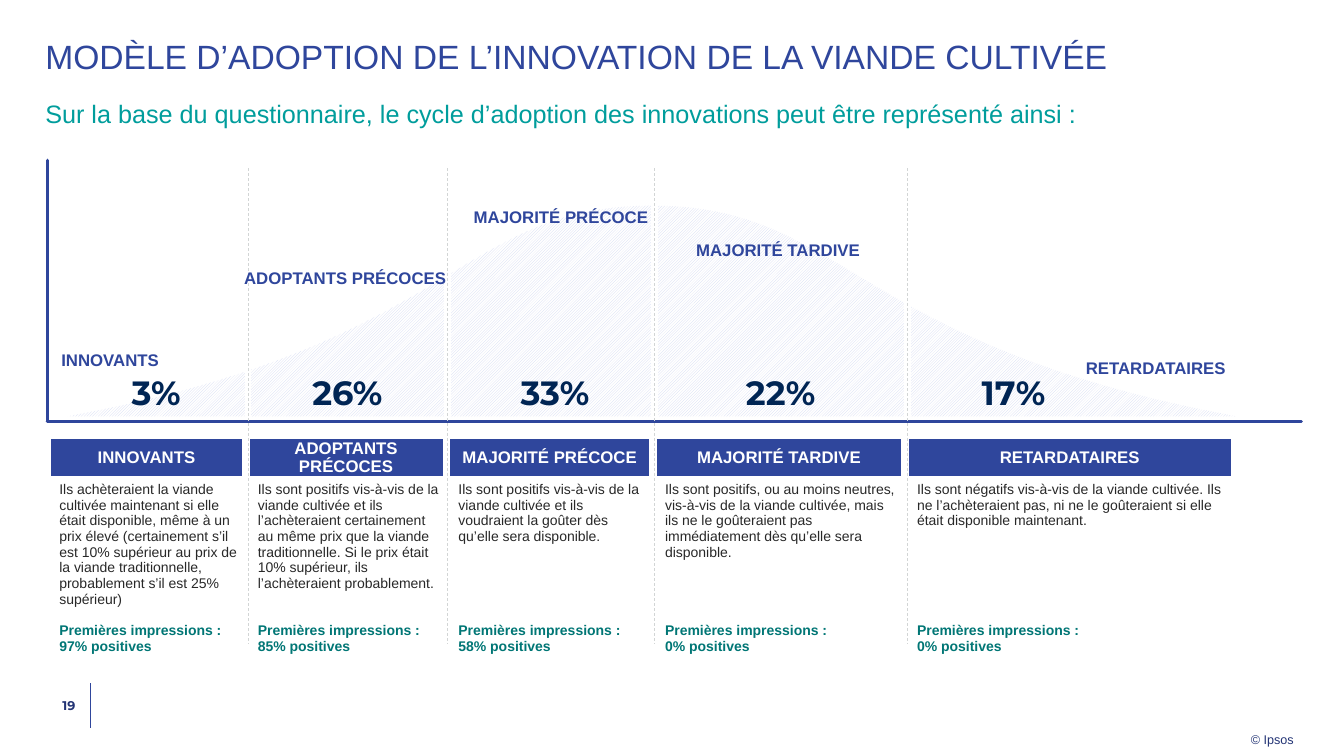
from pptx import Presentation
from pptx.dml.color import RGBColor
from pptx.enum.dml import MSO_LINE, MSO_PATTERN
from pptx.enum.shapes import MSO_CONNECTOR
from pptx.enum.text import MSO_ANCHOR as ANCHOR, PP_ALIGN as ALIGN
from pptx.oxml import parse_xml
from pptx.oxml.ns import nsdecls, qn
from pptx.util import Pt

BLUE, NAVY, TEAL, WHITE = "2F469C", "233475", "009D9C", "FFFFFF"

deck = Presentation()
deck.slide_width, deck.slide_height = Pt(960), Pt(540)
page = deck.slides.add_slide(deck.slide_layouts[6])


def write(frame, text, size=12, color=BLUE, font="Arial", bold=False, align=ALIGN.LEFT,
          anchor=ANCHOR.TOP, insets=(7.2, 3.6, 7.2, 3.6), wrap=True, spacing=None):
    """Fill a text frame with one formatted paragraph."""
    frame.margin_left, frame.margin_top, frame.margin_right, frame.margin_bottom = map(Pt, insets)
    frame.word_wrap, frame.vertical_anchor = wrap, anchor
    para = frame.paragraphs[0]
    para.text, para.alignment, para.line_spacing = text, align, spacing
    span = para.runs[0]
    span.font.name, span.font.size, span.font.bold = font, Pt(size), bold
    span.font.color.rgb = RGBColor.from_string(color)


def draw_line(x1, y1, x2, y2, color, width, dash=None, cap="flat"):
    line = page.shapes.add_connector(MSO_CONNECTOR.STRAIGHT, Pt(x1), Pt(y1), Pt(x2), Pt(y2))
    line.line.color.rgb = RGBColor.from_string(color)
    line.line.width = Pt(width)
    line.line.dash_style = dash
    properties = line.element.spPr
    properties.find(qn("a:ln")).set("cap", cap)
    properties.append(parse_xml(f"<a:effectLst {nsdecls('a')}/>"))


# Heading and footer
none = (0, 0, 0, 0)
for text, (left, top, width, height), style in [
    ("MODÈLE D’ADOPTION DE L’INNOVATION DE LA VIANDE CULTIVÉE", (32.4, 28.8, 895.7, 30.2),
     dict(size=24, insets=none, spacing=0.9)),
    ("Sur la base du questionnaire, le cycle d’adoption des innovations peut être représenté ainsi :",
     (32.4, 67, 895.7, 27.4),
     dict(size=18, color=TEAL, anchor=ANCHOR.BOTTOM, insets=(0, 2.9, 0, 2.9))),
    ("19", (32.4, 488.2, 32.4, 31),
     dict(size=9, color=NAVY, font="Montserrat", bold=True, align=ALIGN.RIGHT,
          anchor=ANCHOR.MIDDLE, insets=(0, 0, 11, 0))),
    ("© Ipsos", (893.5, 519.8, 31, 13.7),
     dict(size=9, color=NAVY, insets=(0, 2.9, 0, 0), wrap=False)),
]:
    box = page.shapes.add_textbox(Pt(left), Pt(top), Pt(width), Pt(height))
    write(box.text_frame, text, **style)
draw_line(64.8, 488.2, 64.8, 519.8, BLUE, 0.5)

# Table: heading, column width, description, its line count, share of positives
segments = [
    ("INNOVANTS", 141.8,
     "Ils achèteraient la viande cultivée maintenant si elle était disponible, même à un prix élevé "
     "(certainement s’il est 10% supérieur au prix de la viande traditionnelle, probablement s’il "
     "est 25% supérieur)", 8, "97%"),
    ("ADOPTANTS PRÉCOCES", 143.3,
     "Ils sont positifs vis-à-vis de la viande cultivée et ils l’achèteraient certainement au même "
     "prix que la viande traditionnelle. Si le prix était 10% supérieur, ils l’achèteraient "
     "probablement.", 7, "85%"),
    ("MAJORITÉ PRÉCOCE", 147.6,
     "Ils sont positifs vis-à-vis de la viande cultivée et ils voudraient la goûter dès qu’elle "
     "sera disponible.", 4, "58%"),
    ("MAJORITÉ TARDIVE", 180,
     "Ils sont positifs, ou au moins neutres, vis-à-vis de la viande cultivée, mais ils ne le "
     "goûteraient pas immédiatement dès qu’elle sera disponible.", 5, "0%"),
    ("RETARDATAIRES", 235.4,
     "Ils sont négatifs vis-à-vis de la viande cultivée. Ils ne l’achèteraient pas, ni ne le "
     "goûteraient si elle était disponible maintenant.", 3, "0%"),
]
LINE_HEIGHT = 11.2
table = page.shapes.add_table(2, len(segments), Pt(33.8), Pt(312.5), Pt(848.1), Pt(167)).table
table.first_row = table.horz_banding = False
table.rows[0].height, table.rows[1].height = Pt(28), Pt(139)
for column, (heading, width, description, line_count, positives) in enumerate(segments):
    table.columns[column].width = Pt(width)
    header, body = table.cell(0, column), table.cell(1, column)
    for cell in (header, body):
        for side, weight in [("L", 6), ("R", 6), ("T", 2.25), ("B", 2.25)]:
            cell._tc.get_or_add_tcPr().append(parse_xml(
                f'<a:ln{side} {nsdecls("a")} w="{Pt(weight)}"><a:solidFill>'
                f'<a:srgbClr val="{WHITE}"/></a:solidFill></a:ln{side}>'))
    header.fill.solid()
    header.fill.fore_color.rgb = RGBColor.from_string(BLUE)
    body.fill.background()
    write(header.text_frame, heading, color=WHITE, bold=True, align=ALIGN.CENTER)
    header.vertical_anchor = ANCHOR.MIDDLE
    header.margin_left = header.margin_right = Pt(0.7)
    header.margin_top = header.margin_bottom = 0
    write(body.text_frame, description, size=10, color="282828", spacing=Pt(LINE_HEIGHT))
    body.vertical_anchor = ANCHOR.TOP
    body.margin_left, body.margin_right = Pt(8.6), Pt(3.6)
    body.margin_top, body.margin_bottom = Pt(2.9), Pt(3.6)
    impression = body.text_frame.add_paragraph()
    impression.text = f"Premières impressions :\v{positives} positives"
    impression.line_spacing = Pt(LINE_HEIGHT)
    impression.space_before = Pt((9 - line_count) * LINE_HEIGHT)
    for span in impression.runs:
        span.font.name, span.font.size, span.font.bold = "Arial", Pt(10), True
        span.font.color.rgb = RGBColor.from_string("007675")

# Adoption curve, sampled from two Bézier arcs
arcs = [
    [(48.2, 297.4), (326.9, 246.2), (326.9, 146.9), (465.8, 146.9)],
    [(465.8, 146.9), (604.8, 146.9), (607, 246.2), (883.4, 297.4)],
]
STEPS = 40
curve_points = []
for arc in arcs:
    for step in range(STEPS + 1):
        t = step / STEPS
        weights = ((1 - t) ** 3, 3 * t * (1 - t) ** 2, 3 * t ** 2 * (1 - t), t ** 3)
        curve_points.append([Pt(sum(w * point[axis] for w, point in zip(weights, arc)))
                             for axis in (0, 1)])
builder = page.shapes.build_freeform(*curve_points[0])
builder.add_line_segments(curve_points[1:], close=True)
curve = builder.convert_to_shape()
curve.shadow.inherit = False
curve.fill.patterned()
curve.fill.pattern = MSO_PATTERN.DARK_UPWARD_DIAGONAL
curve.fill.fore_color.rgb = RGBColor.from_string("D0D7F1")
curve.fill.back_color.rgb = RGBColor.from_string(WHITE)
curve.line.fill.background()

# Axes and dividers
draw_line(33.8, 114.5, 33.8, 301, BLUE, 2.25, cap="rnd")
draw_line(929.5, 301, 33.8, 301, BLUE, 2.25, cap="rnd")
for x in (177.1, 319.7, 467.3, 648):
    draw_line(x, 122.4, x, 298.8, WHITE, 4.75)
    draw_line(x, 120.2, x, 460.1, "D2D5D5", 0.5, dash=MSO_LINE.DASH)

# Curve labels: left, top, width, alignment, then left and width of the share
labels = [
    (36.7, 246.2, 85, ALIGN.LEFT, "3%", 84.2, 54.7),
    (166.3, 187.9, 160.6, ALIGN.CENTER, "26%", 212.4, 71.3),
    (330.5, 144, 140.4, ALIGN.CENTER, "33%", 360.7, 71.3),
    (489.6, 167.8, 132.5, ALIGN.CENTER, "22%", 522, 71.3),
    (767.5, 252, 115.2, ALIGN.RIGHT, "17%", 688.3, 71.3),
]
for segment, (left, top, width, align, share, share_left, share_width) in zip(segments, labels):
    box = page.shapes.add_textbox(Pt(left), Pt(top), Pt(width), Pt(21.6))
    write(box.text_frame, segment[0], bold=True, align=align, wrap=False)
    box = page.shapes.add_textbox(Pt(share_left), Pt(262.1), Pt(share_width), Pt(36))
    write(box.text_frame, share, size=24, color="002554", font="Montserrat", bold=True,
          align=ALIGN.CENTER, wrap=False)

deck.save("out.pptx")
